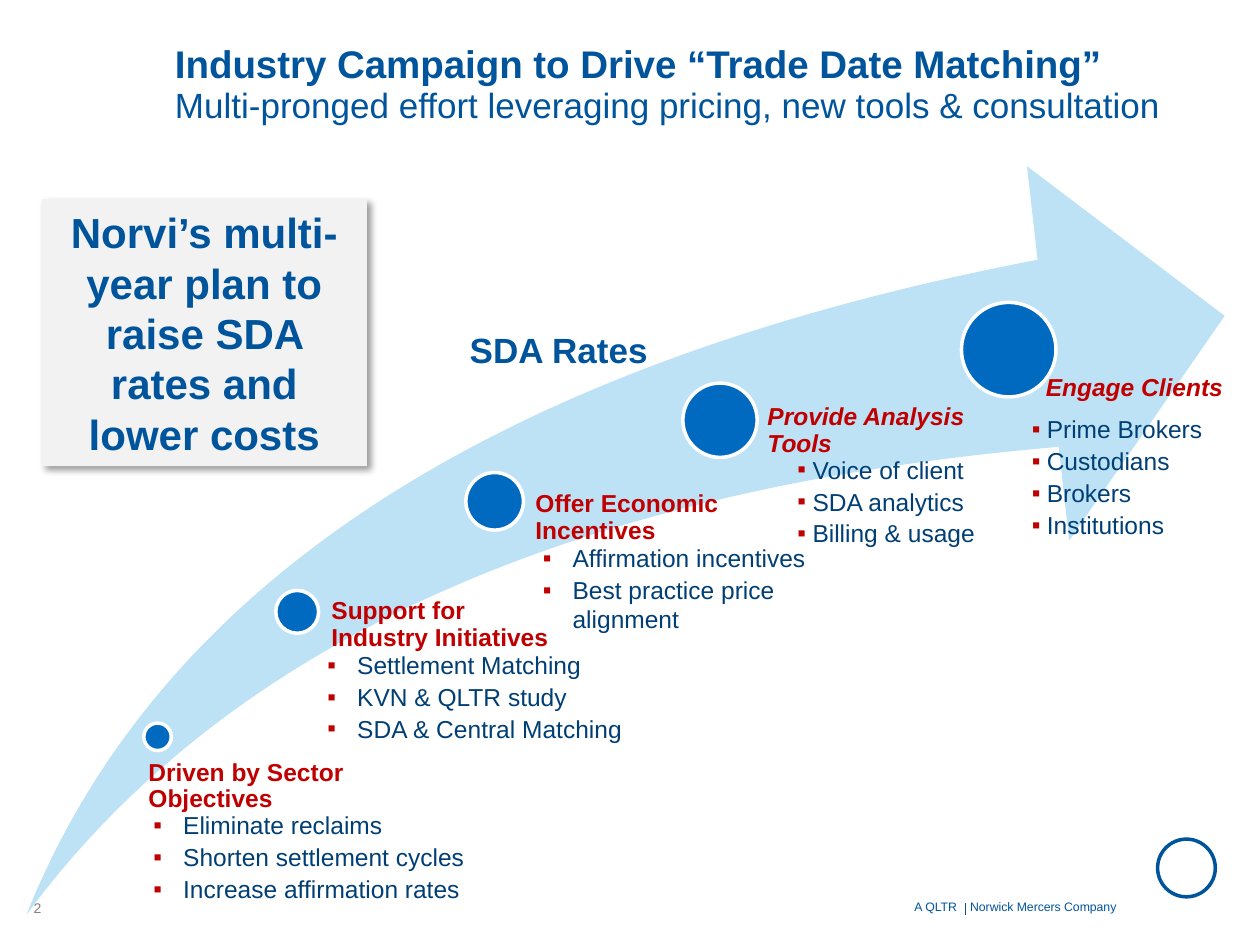
from dataclasses import dataclass

from lxml.etree import SubElement
from pptx import Presentation
from pptx.dml.color import RGBColor
from pptx.enum.shapes import MSO_CONNECTOR, MSO_SHAPE
from pptx.enum.text import MSO_ANCHOR, PP_ALIGN
from pptx.oxml.ns import qn
from pptx.util import Pt


@dataclass(frozen=True)
class Theme:
    font: str = "Arial"
    brand: str = "00549C"
    dot: str = "0069C0"
    arrow: str = "BDE2F6"
    heading: str = "C00000"
    body: str = "003F75"
    panel: str = "F2F2F2"
    white: str = "FFFFFF"
    muted: str = "808183"
    shadow: str = "000000"
    callout_size: int = 24
    title_size: int = 22
    subtitle_size: int = 20
    body_size: int = 14
    number_size: int = 8
    footer_size: int = 7


class SlideBuilder:
    def __init__(self, slide, theme):
        self.slide = slide
        self.theme = theme

    def style(self, item, size, color, bold=False, italic=False):
        """Format the font of a run or a paragraph."""
        font = item.font
        font.name, font.size = self.theme.font, Pt(size)
        font.bold, font.italic = bold, italic
        font.color.rgb = RGBColor.from_string(color)

    def shape(self, kind, box, fill, line=None, line_width=2):
        shape = self.slide.shapes.add_shape(kind, *map(Pt, box))
        shape.shadow.inherit = False
        shape.fill.solid()
        shape.fill.fore_color.rgb = RGBColor.from_string(fill)
        if line:
            shape.line.color.rgb = RGBColor.from_string(line)
            shape.line.width = Pt(line_width)
        else:
            shape.line.fill.background()
        return shape

    def text(self, box, text, size, color, bold=False, italic=False, wrap=True):
        shape = self.slide.shapes.add_textbox(*map(Pt, box))
        frame = shape.text_frame
        frame.text = text
        frame.word_wrap = wrap
        for paragraph in frame.paragraphs:
            for run in paragraph.runs:
                self.style(run, size, color, bold, italic)
        return frame

    def title(self, box, title, subtitle):
        theme = self.theme
        frame = self.text(box, f"{title}\v{subtitle}", theme.title_size, theme.brand, bold=True)
        frame.vertical_anchor = MSO_ANCHOR.MIDDLE
        paragraph = frame.paragraphs[0]
        paragraph.line_spacing = 0.95
        self.style(paragraph.runs[1], theme.subtitle_size, theme.brand)

    def heading(self, box, text, inset, italic):
        theme = self.theme
        frame = self.text(box, text, theme.body_size, theme.heading, True, italic)
        frame.margin_left = Pt(inset)
        frame.margin_top = frame.margin_right = frame.margin_bottom = 0
        for paragraph in frame.paragraphs:
            paragraph.line_spacing = 0.9

    def bullets(self, box, items, indent):
        theme = self.theme
        frame = self.text(box, "\n".join(items), theme.body_size, theme.body)
        for index, paragraph in enumerate(frame.paragraphs):
            if index:
                paragraph.space_before = Pt(1.4)
            properties = paragraph._p.get_or_add_pPr()
            properties.set("marL", str(Pt(indent)))
            properties.set("indent", str(-Pt(indent)))
            color = SubElement(properties, qn("a:buClr"))
            SubElement(color, qn("a:srgbClr"), val=theme.heading)
            SubElement(properties, qn("a:buFont"), typeface=theme.font)
            SubElement(properties, qn("a:buChar"), char="▪")

    def callout(self, box, text):
        """Draw a centred statement on a panel with a soft shadow."""
        theme = self.theme
        shape = self.shape(MSO_SHAPE.RECTANGLE, box, theme.panel)
        shape.text_frame.text = text
        shape.text_frame.word_wrap = True
        paragraph = shape.text_frame.paragraphs[0]
        paragraph.alignment = PP_ALIGN.CENTER
        self.style(paragraph.runs[0], theme.callout_size, theme.brand, bold=True)
        effects = shape._element.spPr.find(qn("a:effectLst"))
        shadow = SubElement(effects, qn("a:outerShdw"), blurRad=str(Pt(4)),
                            dist=str(Pt(3)), dir=str(45 * 60000), rotWithShape="0")
        color = SubElement(shadow, qn("a:srgbClr"), val=theme.shadow)
        SubElement(color, qn("a:alpha"), val="40000")

    def footer(self, box, text, tab):
        theme = self.theme
        frame = self.text(box, text, theme.footer_size, theme.brand)
        tabs = SubElement(frame.paragraphs[0]._p.get_or_add_pPr(), qn("a:tabLst"))
        SubElement(tabs, qn("a:tab"), pos=str(Pt(tab)), algn="l")

    def line(self, start, end, color, width):
        connector = self.slide.shapes.add_connector(
            MSO_CONNECTOR.STRAIGHT, *map(Pt, start + end))
        connector.line.color.rgb = RGBColor.from_string(color)
        connector.line.width = Pt(width)
        SubElement(connector._element.spPr, qn("a:effectLst"))

    def milestone(self, dot, heading, heading_box, inset, italic, items, list_box, indent):
        """Draw one stage: its dot on the arrow, its heading and its bullets."""
        left, top, diameter = dot
        self.shape(MSO_SHAPE.OVAL, (left, top, diameter, diameter),
                   self.theme.dot, self.theme.white)
        self.heading(heading_box, heading, inset, italic)
        self.bullets(list_box, items, indent)


MILESTONES = [
    ((82.2, 413.2, 15.7), "Driven by Sector Objectives", (76.3, 434.2, 140.4, 54), 8.5, False,
     ["Eliminate reclaims", "Shorten settlement cycles", "Increase affirmation rates"],
     (80.6, 459.4, 202.3, 65.5), 17),
    ((157.6, 337.4, 24.5), "Support for\nIndustry Initiatives", (176.4, 342, 185, 179.3), 13, False,
     ["Settlement Matching", "KVN & QLTR study", "SDA & Central Matching"],
     (180, 367.9, 198, 65.5), 17),
    ((266.2, 270, 32.9), "Offer Economic Incentives", (288.7, 280.8, 189.4, 240.5), 17.3, False,
     ["Affirmation incentives", "Best practice price alignment"],
     (303.1, 306.7, 178.6, 65.5), 17),
    ((390.2, 218.9, 42.5), "Provide Analysis Tools", (416.2, 231.1, 146, 286.6), 22.3, True,
     ["Voice of client", "SDA analytics", "Billing & usage"],
     (448.6, 256.3, 190.8, 65.5), 8.6),
    ((549.4, 172.8, 54), "Engage Clients", (568.8, 214.5, 136.8, 175), 28.8, True,
     ["Prime Brokers", "Custodians", "Brokers", "Institutions"],
     (582.5, 233.3, 137, 77), 8.6),
]


def main():
    presentation = Presentation()
    presentation.slide_width, presentation.slide_height = Pt(720), Pt(540)
    slide = presentation.slides.add_slide(presentation.slide_layouts[6])
    theme = Theme()
    builder = SlideBuilder(slide, theme)

    builder.shape(MSO_SHAPE.OVAL, (661.5, 479.5, 33, 33), theme.white, theme.brand)
    builder.footer((515.5, 510.5, 139, 15.8), "A QLTR\tNorwick Mercers Company", 31.8)
    builder.line((551.5, 516.2), (551.5, 522.7), theme.brand, 0.5)
    builder.text((12.2, 510.5, 24.5, 16.6), "2", theme.number_size, theme.muted, wrap=False)

    arrow = builder.shape(MSO_SHAPE.SWOOSH_ARROW, (15.1, 95, 684.7, 427.7), theme.arrow)
    arrow.adjustments[0] = arrow.adjustments[1] = 0.25
    for milestone in MILESTONES:
        builder.milestone(*milestone)

    label = builder.text((260.6, 184.3, 117.4, 31.7), "SDA Rates",
                         theme.subtitle_size, theme.brand, bold=True, wrap=False)
    label.paragraphs[0].alignment = PP_ALIGN.CENTER
    builder.title((92.9, 15.1, 608.4, 67), "Industry Campaign to Drive “Trade Date Matching”",
                  "Multi-pronged effort leveraging pricing, new tools & consultation")
    builder.callout((23.8, 113.8, 185.8, 152.6),
                    "Norvi’s multi-year plan to raise SDA rates and lower costs")
    presentation.save("out.pptx")


if __name__ == "__main__":
    main()
